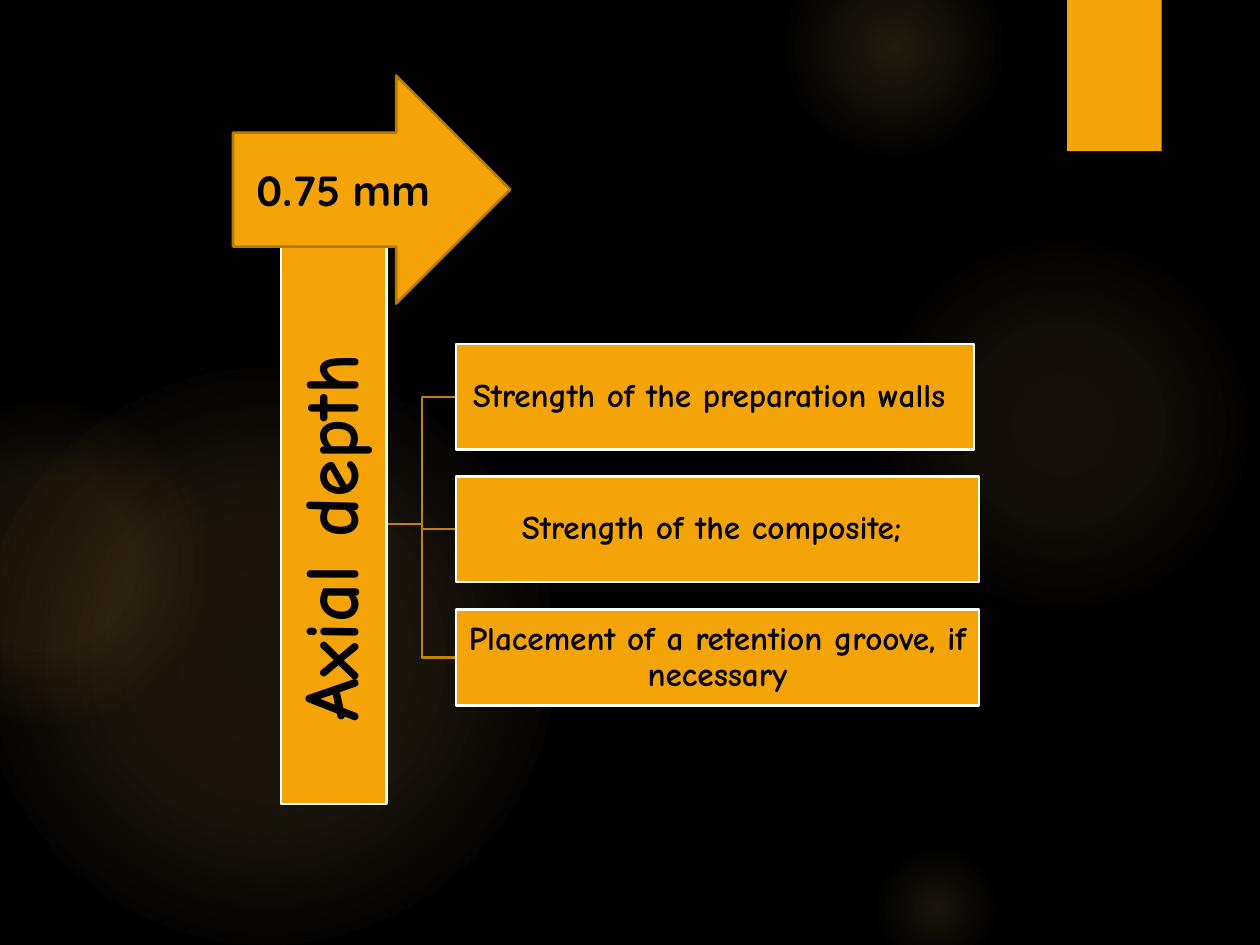
from lxml import etree
from pptx import Presentation
from pptx.dml.color import RGBColor
from pptx.enum.shapes import MSO_SHAPE
from pptx.enum.text import MSO_ANCHOR, PP_ALIGN
from pptx.oxml import parse_xml
from pptx.oxml.ns import nsdecls, qn
from pptx.util import Inches, Pt

OVAL, RECTANGLE, RIGHT_ARROW = MSO_SHAPE.OVAL, MSO_SHAPE.RECTANGLE, MSO_SHAPE.RIGHT_ARROW
MIDDLE, CENTER = MSO_ANCHOR.MIDDLE, PP_ALIGN.CENTER

BLACK = RGBColor(0x00, 0x00, 0x00)
WHITE = RGBColor(0xFF, 0xFF, 0xFF)
ORANGE = RGBColor(0xF5, 0xA4, 0x08)
DARK_ORANGE = RGBColor(0xB5, 0x79, 0x06)
BRANCH_ORANGE = RGBColor(0xC4, 0x83, 0x06)
GLOW = RGBColor(0xFA, 0xC9, 0x6A)

prs = Presentation()
prs.slide_width, prs.slide_height = Inches(10), Inches(7.5)
slide = prs.slides.add_slide(prs.slide_layouts[6])
slide.background.fill.solid()
slide.background.fill.fore_color.rgb = BLACK


def add_block(kind, left, top, width, height, line=None):
    block = slide.shapes.add_shape(kind, Inches(left), Inches(top), Inches(width), Inches(height))
    block.shadow.inherit = False
    block.fill.solid()
    block.fill.fore_color.rgb = ORANGE
    if line is None:
        block.line.fill.background()
    else:
        block.line.color.rgb = line
        block.line.width = Pt(1.5)
    return block


def write(block, text, size, font, inset, spacing):
    frame = block.text_frame
    frame.word_wrap = True
    frame.vertical_anchor = MIDDLE
    frame.margin_left = frame.margin_right = Inches(inset)
    frame.margin_top = frame.margin_bottom = Inches(min(inset, 0.05))
    paragraph = frame.paragraphs[0]
    paragraph.text = text
    paragraph.alignment = CENTER
    paragraph.line_spacing = spacing
    paragraph.font.name = font
    paragraph.font.size = Pt(size)
    paragraph.font.bold = True
    paragraph.font.color.rgb = BLACK


glows = [
    (6.89, 1.83, 3.08, [(0, 7), (36, 6), (69, 0)]),
    (6.22, -0.5, 1.75, [(0, 14), (36, 7), (73, 0)]),
    (6.89, 6.67, 1.08, [(0, 10), (31, 5), (66, 0)]),
    (-0.17, 2.92, 4.58, [(0, 11), (36, 10), (75, 0)]),
    (-0.92, 3.17, 2.58, [(0, 8), (36, 8), (72, 0)]),
]
for left, top, diameter, stops in glows:
    glow = add_block(OVAL, left, top, diameter, diameter)
    gradient = parse_xml(
        f'<a:gradFill {nsdecls("a")}><a:gsLst/><a:path path="circle">'
        '<a:fillToRect l="50000" t="50000" r="50000" b="50000"/></a:path></a:gradFill>'
    )
    for position, opacity in stops:
        stop = etree.SubElement(gradient[0], qn("a:gs"), pos=str(position * 1000))
        color = etree.SubElement(stop, qn("a:srgbClr"), val=str(GLOW))
        etree.SubElement(color, qn("a:alpha"), val=str(opacity * 1000))
    solid = glow.fill._xPr.find(qn("a:solidFill"))
    solid.getparent().replace(solid, gradient)

add_block(RECTANGLE, 8.47, 0, 0.75, 1.2)

STEM_RIGHT, BRANCH_X, REASON_LEFT, STEM_Y = 3.07, 3.35, 3.62, 4.16
reasons = [
    ("Strength of the preparation walls ", 2.73, 4.11, 0.84),
    ("Strength of the composite; ", 3.78, 4.15, 0.84),
    ("Placement of a retention groove, if necessary", 4.84, 4.15, 0.76),
]
for text, top, width, height in reasons:
    middle = top + height / 2
    builder = slide.shapes.build_freeform(Inches(STEM_RIGHT), Inches(STEM_Y))
    corners = [(BRANCH_X, STEM_Y), (BRANCH_X, middle), (REASON_LEFT, middle)]
    builder.add_line_segments([(Inches(x), Inches(y)) for x, y in corners], close=False)
    branch = builder.convert_to_shape()
    branch.shadow.inherit = False
    branch.fill.background()
    branch.line.color.rgb = BRANCH_ORANGE
    branch.line.width = Pt(1.5)

stem = add_block(RECTANGLE, 0.43, 3.74, 4.44, 0.84, WHITE)
stem.rotation = 270
write(stem, "Axial depth ", 44, "Comic Neue", 0.03, 0.9)

for text, top, width, height in reasons:
    reason = add_block(RECTANGLE, REASON_LEFT, top, width, height, WHITE)
    write(reason, text, 19, "Comic Neue", 0.01, 0.9)

depth = add_block(RIGHT_ARROW, 1.85, 0.6, 2.2, 1.81, DARK_ORANGE)
write(depth, "0.75 mm", 24, "Quicksand", 0.1, 1.0)

prs.save("out.pptx")
